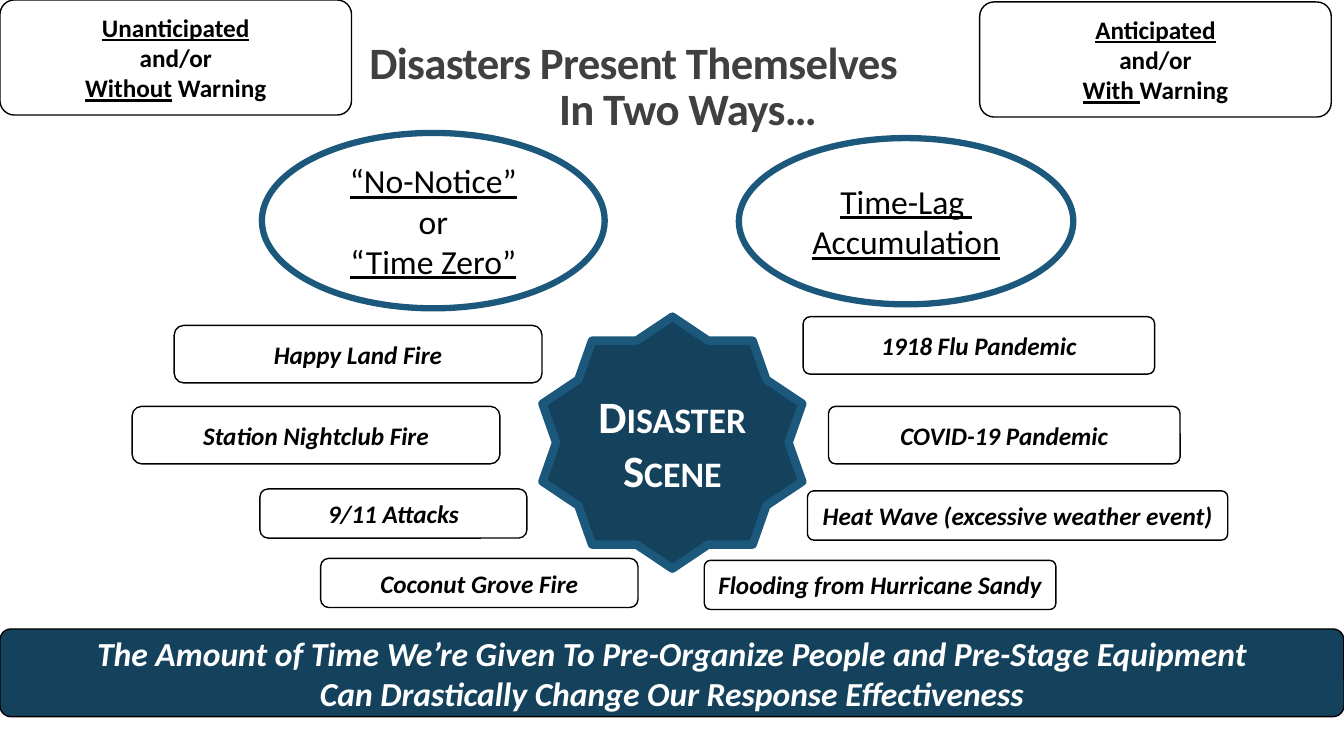
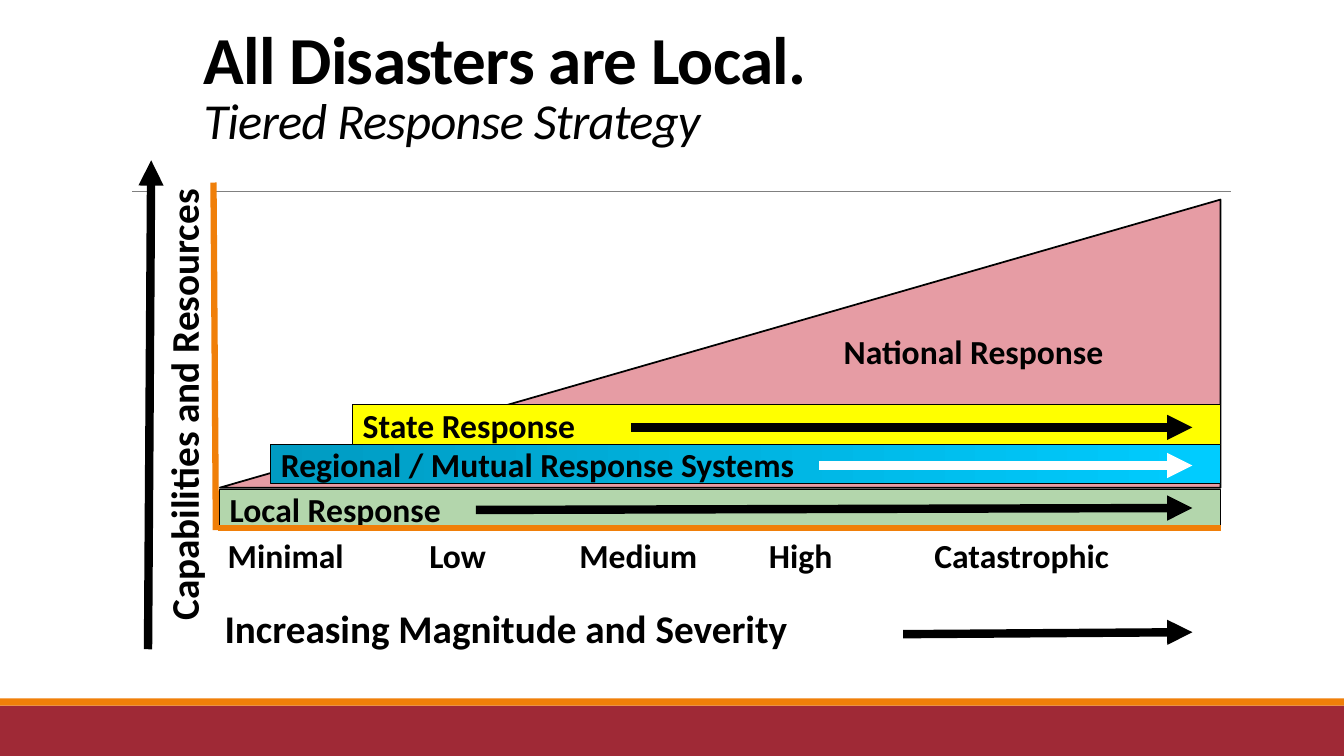
from pptx import Presentation
from pptx.dml.color import RGBColor
from pptx.enum.shapes import MSO_CONNECTOR, MSO_SHAPE as Preset
from pptx.enum.text import MSO_ANCHOR as Anchor, PP_ALIGN as Align
from pptx.oxml.ns import qn
from pptx.util import Cm, Pt
from lxml.etree import SubElement

COLORS = {
    "white": "FFFFFF", "black": "000000", "gray": "404040", "rule": "808080",
    "navy": "14425D", "blue": "1B587C", "crimson": "9F2936", "orange": "F07F09",
    "pink": "E69CA4", "yellow": "FFFF00", "green": "B3D6AC",
    "cyan_dark": "009BC2", "cyan": "00CCFF",
}
FONT = "Calibri"
UNDERLINED = {"underline": True}
TITLE = {"line_spacing": 0.85, "attributes": {"spc": "-50"}}


def rgb(name):
    return RGBColor.from_string(COLORS[name])


def add_box(page, kind, at, lines=(), fill=None, line=None, weight=1, size=18,
            color="black", bold=True, italic=False, align=Align.CENTER,
            anchor=Anchor.MIDDLE, line_spacing=None, attributes=None):
    """Add a preset shape, or a text box if kind is None.

    Each line is a string or a list of (text, font overrides) pairs;
    attributes are set on the properties of every run.
    """
    place = [Cm(value) for value in at]
    if kind is None:
        box = page.shapes.add_textbox(*place)
    else:
        box = page.shapes.add_shape(kind, *place)
        box.shadow.inherit = False
        box.fill.solid()
        box.fill.fore_color.rgb = rgb(fill)
        if line:
            box.line.color.rgb = rgb(line)
            box.line.width = Pt(weight)
        else:
            box.line.fill.background()
    frame = box.text_frame
    frame.word_wrap = True
    frame.vertical_anchor = anchor
    for index, content in enumerate(lines):
        para = frame.add_paragraph() if index else frame.paragraphs[0]
        para.alignment = align
        para.line_spacing = line_spacing
        for text, overrides in [(content, {})] if isinstance(content, str) else content:
            span = para.add_run()
            span.text = text
            font = span.font
            font.name, font.size, font.bold, font.italic = FONT, Pt(size), bold, italic
            font.color.rgb = rgb(color)
            for name, value in overrides.items():
                setattr(font, name, value)
            for name, value in (attributes or {}).items():
                span._r.get_or_add_rPr().set(name, value)
    return box


deck = Presentation()
deck.slide_width, deck.slide_height = Cm(33.87), Cm(19.05)
blank = deck.slide_layouts[6]

# Slide 1: two ways disasters present themselves
page = deck.slides.add_slide(blank)
add_box(page, Preset.STAR_10_POINT, (13.67, 7.98, 6.55, 6.35), ["Disaster", "Scene"],
        "navy", "blue", 6, 32, "white", attributes={"cap": "small"})
title = add_box(page, None, (6.02, 0.64, 19.89, 3.18),
                ["Disasters Present Themselves", "In Two Ways…"],
                size=32, color="gray", **TITLE)
title.text_frame.paragraphs[1]._p.get_or_add_pPr().set("marL", str(Cm(2.74)))

event_columns = [
    (0.167, [
        ("Happy Land Fire", (4.39, 8.2, 9.27, 1.45)),
        ("Station Nightclub Fire", (3.33, 10.24, 9.27, 1.45)),
        ("9/11 Attacks", (6.55, 12.32, 6.73, 1.24)),
        ("Coconut Grove Fire", (8.08, 14.07, 8, 1.24)),
    ]),
    (0.125, [
        ("1918 Flu Pandemic", (20.24, 7.98, 8.86, 1.45)),
        ("COVID-19 Pandemic", (20.88, 10.24, 8.86, 1.45)),
        ("Heat Wave (excessive weather event)", (20.35, 12.37, 10.59, 1.24)),
        ("Flooding from Hurricane Sandy", (17.75, 14.12, 8.86, 1.24)),
    ]),
]
for radius, events in event_columns:
    for event, at in events:
        box = add_box(page, Preset.ROUNDED_RECTANGLE, at, [event],
                      "white", "black", italic=True)
        box.adjustments[0] = radius

banner = add_box(page, Preset.ROUNDED_RECTANGLE, (0, 15.85, 33.87, 2.21), [
    "The Amount of Time We’re Given To Pre-Organize People and Pre-Stage Equipment",
    "Can Drastically Change Our Response Effectiveness",
], "navy", "black", size=24, color="white", italic=True)
banner.adjustments[0] = 0.125

onsets = [
    ((6.6, 3.35, 8.64, 4.42),
     [[("“No-Notice”", UNDERLINED)], "or", [("“Time Zero”", UNDERLINED)]]),
    ((18.62, 3.48, 8.43, 4.19),
     [[("Time-Lag ", UNDERLINED)], [("Accumulation", UNDERLINED)]]),
]
for at, lines in onsets:
    add_box(page, Preset.OVAL, at, lines, "white", "blue", 4.5, 24, bold=False)

warnings = [
    (0, 0, "Unanticipated", "Without", " Warning"),
    (24.69, 0.05, "Anticipated", "With ", "Warning"),
]
for left, top, heading, stressed, rest in warnings:
    box = add_box(page, Preset.ROUNDED_RECTANGLE, (left, top, 8.86, 2.9),
                  [[(heading, UNDERLINED)], "and/or", [(stressed, UNDERLINED), (rest, {})]],
                  "white", "black")
    box.adjustments[0] = 0.125

# Slide 2: tiered response strategy
page = deck.slides.add_slide(blank)
add_box(page, Preset.RECTANGLE, (0, 17.78, 33.87, 1.27), fill="crimson")
add_box(page, Preset.RECTANGLE, (0, 17.6, 33.87, 0.18), fill="orange")
add_box(page, None, (4.88, 0, 20.96, 3.89), [
    "All Disasters are Local.",
    [("Tiered Response Strategy", {"size": Pt(36), "bold": False, "italic": True})],
], size=48, align=Align.LEFT, anchor=Anchor.BOTTOM, **TITLE)

chart_right, arrow_right = 30.76, 30.05
triangle = add_box(page, Preset.RIGHT_TRIANGLE, (5.54, 5.03, chart_right - 5.54, 7.26),
                   fill="pink", line="black", weight=1.25)
triangle._element.spPr.find(qn("a:xfrm")).set("flipH", "1")
add_box(page, None, (20.65, 8.2, 7.77, 1.27), ["National Response"], size=24)

tiers = [
    ("Regional / Mutual Response Systems", 6.83, 11.2, 0.99, "cyan"),
    ("State Response", 8.89, 10.19, 1.02, "yellow"),
    ("Local Response", 5.54, 12.34, 0.97, "green"),
]
for tier, left, top, height, fill in tiers:
    bar = add_box(page, Preset.RECTANGLE, (left, top, chart_right - left, height), [tier],
                  fill, "black", 0.75, 24, align=Align.LEFT)
    if fill == "cyan":
        bar.fill.gradient()
        bar.fill.gradient_angle = 0
        for stop, shade in zip(bar.fill.gradient_stops, ("cyan_dark", "cyan")):
            stop.color.rgb = rgb(shade)

add_box(page, None, (5.41, 15.29, 19.3, 1.07), ["Increasing Magnitude and Severity"],
        size=28, align=Align.LEFT)
scale = add_box(page, None, (5.49, 13.36, 25.27, 1.27),
                ["Minimal\tLow\tMedium\tHigh\tCatastrophic"],
                size=24, align=Align.LEFT, anchor=Anchor.TOP)
tabs = SubElement(scale.text_frame.paragraphs[0]._p.get_or_add_pPr(), qn("a:tabLst"))
for position in (5.08, 8.86, 13.64, 17.81):
    SubElement(tabs, qn("a:tab"), pos=str(Cm(position)), algn="l")

lines = [
    ((3.33, 4.83), (31.01, 4.83), "rule", 0.5, False),
    ((3.73, 16.36), (3.81, 4.04), "black", 6, True),
    ((20.65, 11.73), (arrow_right, 11.73), "white", 6, True),
    ((15.9, 10.77), (arrow_right, 10.77), "black", 6, True),
    ((11.99, 12.85), (arrow_right, 12.8), "black", 6, True),
    ((22.76, 15.98), (arrow_right, 15.93), "black", 6, True),
    ((5.44, 13.36), (5.38, 4.6), "orange", 4.5, False),
    ((5.49, 13.31), (chart_right, 13.31), "orange", 4.5, False),
]
for start, end, color, weight, has_arrowhead in lines:
    connector = page.shapes.add_connector(
        MSO_CONNECTOR.STRAIGHT, *[Cm(value) for value in start + end])
    connector.line.color.rgb = rgb(color)
    connector.line.width = Pt(weight)
    properties = connector._element.spPr
    if has_arrowhead:
        SubElement(properties.find(qn("a:ln")), qn("a:tailEnd"), type="triangle")
    SubElement(properties, qn("a:effectLst"))
    if color == "rule":
        # The axis label hides the part of the rule behind it
        label = add_box(page, Preset.RECTANGLE, (-1.14, 9.55, 11.51, 1.45),
                        ["Capabilities and Resources"], "white", size=28, align=Align.RIGHT)
        label.rotation = 270

deck.save("out.pptx")
